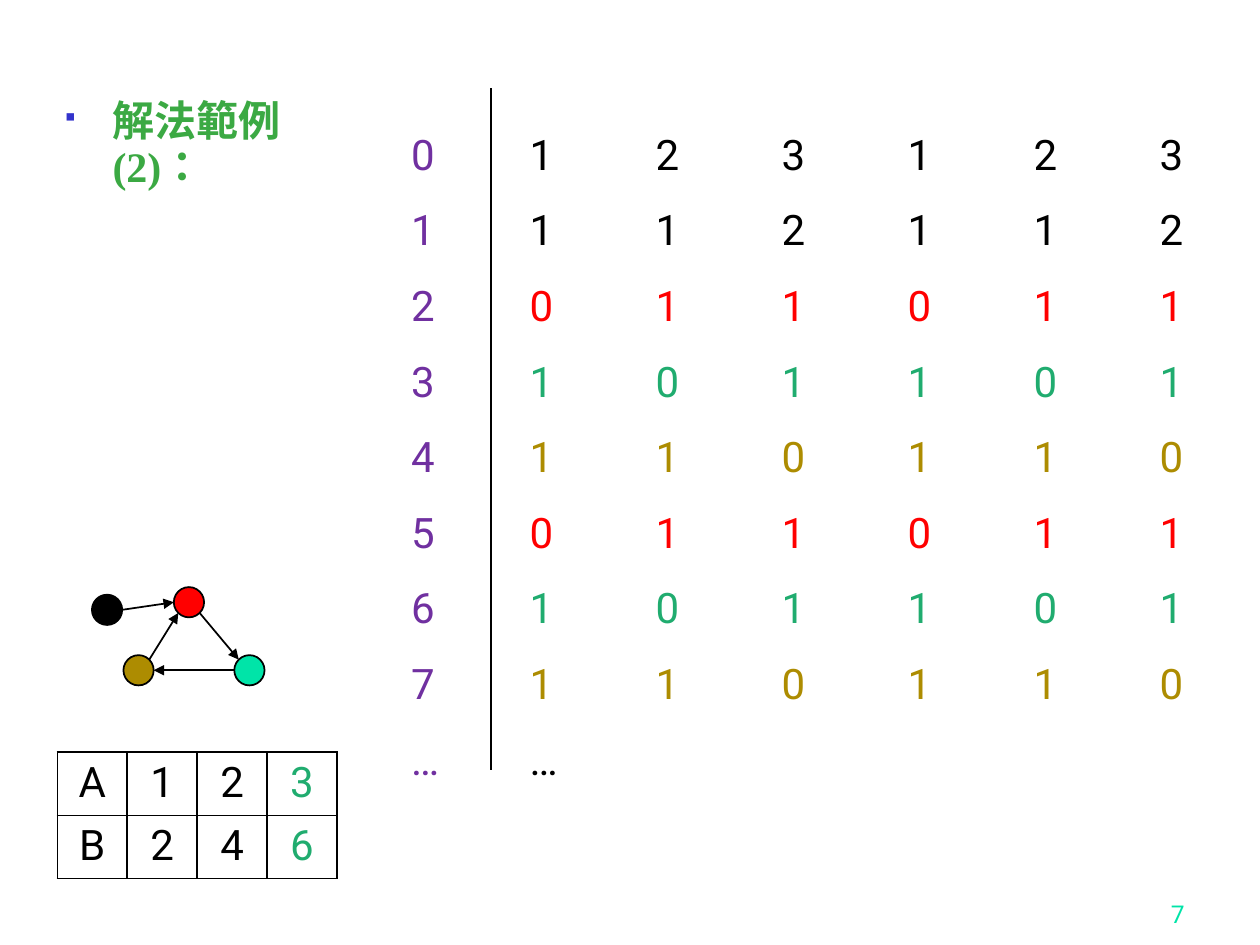
import math

import pptx
import pptx.dml.color
import pptx.enum.dml
import pptx.enum.lang
import pptx.enum.shapes
import pptx.enum.text
import pptx.oxml
import pptx.oxml.ns
import pptx.util
from lxml import etree

RGBColor = pptx.dml.color.RGBColor
BLACK = RGBColor(0x00, 0x00, 0x00)
RED = RGBColor(0xFF, 0x00, 0x00)
GREEN = RGBColor(0x20, 0xAC, 0x6F)
GOLD = RGBColor(0xAD, 0x8C, 0x01)
MINT = RGBColor(0x00, 0xE4, 0xA8)
PURPLE = RGBColor(0x70, 0x30, 0xA0)
HEADING_GREEN = RGBColor(0x3B, 0xA9, 0x43)
BULLET_BLUE = RGBColor(0x33, 0x33, 0xCC)

UNIT = pptx.util.Inches(0.1)
COLUMNS, ROWS = 100, 75
TAB_GAP = 10
ALIGN = pptx.enum.text.PP_ALIGN

SEQUENCE = [
    ("1 2 3 1 2 3", BLACK),
    ("1 1 2 1 1 2", BLACK),
    ("0 1 1 0 1 1", RED),
    ("1 0 1 1 0 1", GREEN),
    ("1 1 0 1 1 0", GOLD),
    ("0 1 1 0 1 1", RED),
    ("1 0 1 1 0 1", GREEN),
    ("1 1 0 1 1 0", GOLD),
    ("…", BLACK),
]
PAIRS = ["A123", "B246"]


def grid(*lengths):
    """Turn grid columns and rows into slide lengths."""
    return [round(length * UNIT) for length in lengths]


def add_element(parent, tag, **attributes):
    """Append a DrawingML element to its parent."""
    return etree.SubElement(parent, pptx.oxml.ns.qn(tag), attributes)


def style(paragraph, color, size=24, face="Roboto", bold=False):
    """Format every run of a paragraph."""
    for run in paragraph.runs:
        run.font.size = pptx.util.Pt(size)
        run.font.name = face
        run.font.bold = bold
        run.font.color.rgb = color


def add_line(shapes, start, end, width, arrow=False):
    """Draw a black line between two grid points."""
    line = shapes.add_connector(
        pptx.enum.shapes.MSO_CONNECTOR.STRAIGHT, *grid(*start, *end))
    line.line.color.rgb = BLACK
    line.line.width = pptx.util.Pt(width)
    if arrow:
        add_element(line.line._get_or_add_ln(), "a:tailEnd", type="triangle")
    add_element(line._element.spPr, "a:effectLst")


def add_heading(slide, box):
    """Place the bulleted heading."""
    frame = slide.shapes.add_textbox(*grid(*box)).text_frame
    frame.word_wrap = True
    heading = frame.paragraphs[0]
    heading.text = "解法範例(2)："
    style(heading, HEADING_GREEN, face="Times New Roman", bold=True)
    heading.runs[0].font.language_id = (
        pptx.enum.lang.MSO_LANGUAGE_ID.TRADITIONAL_CHINESE)
    heading.line_spacing = 0.9
    heading.space_before = pptx.util.Pt(4.8)
    properties = heading._p.get_or_add_pPr()
    indent = pptx.util.Inches(0.38)
    properties.set("marL", str(indent))
    properties.set("indent", str(-indent))
    add_element(add_element(properties, "a:buClr"), "a:srgbClr", val=str(BULLET_BLUE))
    add_element(properties, "a:buSzPct", val="60000")
    add_element(properties, "a:buFont", typeface="Wingdings", charset="2")
    add_element(properties, "a:buChar", char="§")


def add_lines_of_text(slide, box, lines):
    """Place a widely spaced column of coloured lines with even tab stops."""
    frame = slide.shapes.add_textbox(*grid(*box)).text_frame
    frame.word_wrap = False
    frame.auto_size = pptx.enum.text.MSO_AUTO_SIZE.SHAPE_TO_FIT_TEXT
    frame.text = "\n".join(text for text, _ in lines)
    for paragraph, (text, color) in zip(frame.paragraphs, lines):
        paragraph.line_spacing = 1.5
        style(paragraph, color)
        tab_count = text.count("\t")
        if tab_count:
            stops = add_element(paragraph._p.get_or_add_pPr(), "a:tabLst")
            for position in grid(*(TAB_GAP * (tab + 1) for tab in range(tab_count))):
                add_element(stops, "a:tab", pos=str(position), algn="l")


def add_sequence(slide, box):
    """Place the step numbers, the divider and the values of each step."""
    left, top, width, height = box
    last = len(SEQUENCE) - 1
    steps = [("…" if step == last else str(step), PURPLE)
             for step in range(len(SEQUENCE))]
    values = [(text.replace(" ", "\t"), color) for text, color in SEQUENCE]
    divider = left + 7.3
    add_lines_of_text(slide, (left + 9.4, top, width - 9.4, height), values)
    add_lines_of_text(slide, (left, top, 4.8, height), steps)
    add_line(slide.shapes, (divider, top - 0.7), (divider, top + 53.4), 1)


def add_pair_table(slide, box):
    """Place the bordered table of A and B."""
    table_frame = slide.shapes.add_table(len(PAIRS), len(PAIRS[0]), *grid(*box))
    table = table_frame.table
    table.first_row = table.horz_banding = False
    for row, letters in enumerate(PAIRS):
        for column, letter in enumerate(letters):
            cell = table.cell(row, column)
            cell.text = letter
            paragraph = cell.text_frame.paragraphs[0]
            paragraph.alignment = ALIGN.CENTER
            style(paragraph, GREEN if column == len(letters) - 1 else BLACK)
            properties = cell._tc.get_or_add_tcPr()
            for side in ("a:lnL", "a:lnR", "a:lnT", "a:lnB"):
                border = add_element(properties, side, w=str(pptx.util.Pt(1)))
                add_element(add_element(border, "a:solidFill"), "a:srgbClr", val=str(BLACK))
            cell.fill.background()


def add_state_graph(slide, box):
    """Place the graph of states with an arrow for each transition."""
    left, top, width, height = box
    diameter = 2.4
    radius = diameter / 2
    low = top + height - radius
    centers = {
        BLACK: (left + radius, top + 0.6 + radius),
        RED: (left + 6.5 + radius, top + radius),
        MINT: (left + width - radius, low),
        GOLD: (left + 2.5 + radius, low),
    }
    transitions = [
        (BLACK, 0, RED, 180),
        (RED, 45, MINT, 225),
        (GOLD, 315, RED, 135),
        (MINT, 180, GOLD, 0),
    ]

    def rim(state, degrees):
        """Return the point on a state's rim at an angle."""
        x, y = centers[state]
        angle = math.radians(degrees)
        return x + radius * math.cos(angle), y + radius * math.sin(angle)

    graph = slide.shapes.add_group_shape().shapes
    for color, (x, y) in centers.items():
        state = graph.add_shape(
            pptx.enum.shapes.MSO_SHAPE.OVAL,
            *grid(x - radius, y - radius, diameter, diameter))
        state.shadow.inherit = False
        state.fill.solid()
        state.fill.fore_color.rgb = color
        state.line.color.rgb = BLACK
        state.line.width = pptx.util.Pt(1)
    for source, leaving, target, arriving in transitions:
        add_line(graph, rim(source, leaving), rim(target, arriving), 1, arrow=True)


def add_page_number(slide, box):
    """Place the page number at the lower right."""
    frame = slide.shapes.add_textbox(*grid(*box)).text_frame
    frame.word_wrap = True
    frame.vertical_anchor = pptx.enum.text.MSO_ANCHOR.BOTTOM
    number = frame.paragraphs[0]
    number.text = "7"
    number.alignment = ALIGN.RIGHT
    style(number, MINT, size=14)


def main():
    """Build the slide and save it."""
    deck = pptx.Presentation()
    deck.slide_width, deck.slide_height = grid(COLUMNS, ROWS)
    slide = deck.slides.add_slide(deck.slide_layouts[6])
    add_page_number(slide, (74.2, 69.2, 20.8, 5))
    add_heading(slide, (4.15, 7.5, 24.6, 25.3))
    add_sequence(slide, (31.65, 7.7, 63.7, 54.7))
    add_pair_table(slide, (4.55, 59.7, 22.2, 8.1))
    add_state_graph(slide, (7.3, 46.6, 13.7, 7.8))
    deck.save("out.pptx")


if __name__ == "__main__":
    main()
